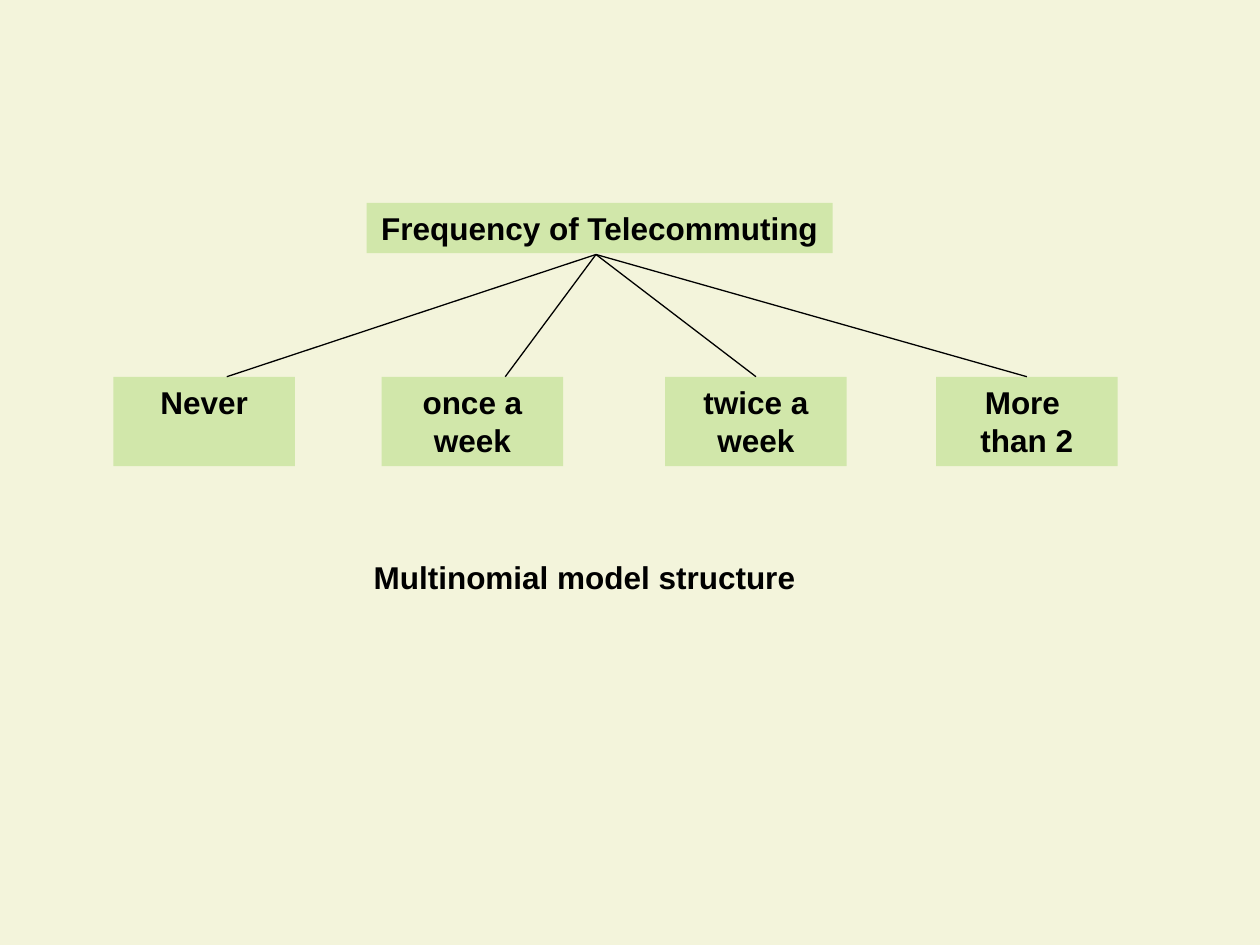
from dataclasses import dataclass

from lxml import etree
from pptx import Presentation
from pptx.dml.color import RGBColor
from pptx.enum.shapes import MSO_CONNECTOR, MSO_SHAPE
from pptx.enum.text import MSO_ANCHOR, PP_ALIGN
from pptx.oxml.ns import qn
from pptx.shapes.autoshape import Shape
from pptx.slide import Slide
from pptx.util import Inches, Pt

RECTANGLE = MSO_SHAPE.RECTANGLE
STRAIGHT = MSO_CONNECTOR.STRAIGHT
CENTER = PP_ALIGN.CENTER
TOP = MSO_ANCHOR.TOP

COLORS = {"page": "F3F4DB", "box": "92D050", "ink": "000000"}
BOX_OPACITY = 35
TOP_SIDE = 0

ROOT_LEFT, ROOT_TOP, ROOT_WIDTH, ROOT_HEIGHT = 2.91, 1.61, 3.7, 0.4
CHOICE_TOP, CHOICE_WIDTH, CHOICE_HEIGHT = 2.99, 1.44, 0.71
BRANCH_X, BRANCH_Y = 4.73, 2.02


@dataclass
class Choice:
    label: str
    left: float
    line_x: float
    joined: bool = False  # the branch meets the middle of the top side


CHOICES = [
    Choice("Never", 0.9, 1.8),
    Choice("once a week", 3.03, 4.01),
    Choice("twice a week", 5.28, 6.0, joined=True),
    Choice("More \nthan 2", 7.43, 8.15, joined=True),
]


def color(name: str) -> RGBColor:
    return RGBColor.from_string(COLORS[name])


def write_text(shape: Shape, text: str, wrap: bool = True) -> None:
    frame = shape.text_frame
    frame.text = text
    frame.word_wrap = wrap
    frame.vertical_anchor = TOP
    for para in frame.paragraphs:
        para.alignment = CENTER
        para.font.name = "Arial"
        para.font.size = Pt(18)
        para.font.bold = True
        para.font.color.rgb = color("ink")


def add_box(page: Slide, text: str, left: float, top: float,
            width: float, height: float) -> Shape:
    box = page.shapes.add_shape(RECTANGLE, Inches(left), Inches(top),
                                Inches(width), Inches(height))
    box.shadow.inherit = False
    box.line.fill.background()
    box.fill.solid()
    box.fill.fore_color.rgb = color("box")
    fill_color = box.fill._xPr.find(qn("a:solidFill")).find(qn("a:srgbClr"))
    etree.SubElement(fill_color, qn("a:alpha"), val=str(BOX_OPACITY * 1000))
    write_text(box, text)
    return box


def add_branch(page: Slide, choice: Choice, box: Shape) -> None:
    branch = page.shapes.add_connector(
        STRAIGHT, Inches(BRANCH_X), Inches(BRANCH_Y),
        Inches(choice.line_x), Inches(CHOICE_TOP))
    if choice.joined:
        branch.end_connect(box, TOP_SIDE)
    branch.line.color.rgb = color("ink")
    branch.line.width = Pt(0.75)
    etree.SubElement(branch._element.spPr, qn("a:effectLst"))


def main() -> None:
    deck = Presentation()
    deck.slide_width, deck.slide_height = Inches(10), Inches(7.5)
    page = deck.slides.add_slide(deck.slide_layouts[6])
    page.background.fill.solid()
    page.background.fill.fore_color.rgb = color("page")

    # Decision tree
    add_box(page, "Frequency of Telecommuting",
            ROOT_LEFT, ROOT_TOP, ROOT_WIDTH, ROOT_HEIGHT)
    for choice in CHOICES:
        box = add_box(page, choice.label, choice.left, CHOICE_TOP,
                      CHOICE_WIDTH, CHOICE_HEIGHT)
        add_branch(page, choice, box)

    # Caption
    caption = page.shapes.add_textbox(Inches(2.85), Inches(4.38),
                                      Inches(3.58), Inches(0.4))
    write_text(caption, "Multinomial model structure", wrap=False)

    deck.save("out.pptx")


if __name__ == "__main__":
    main()
